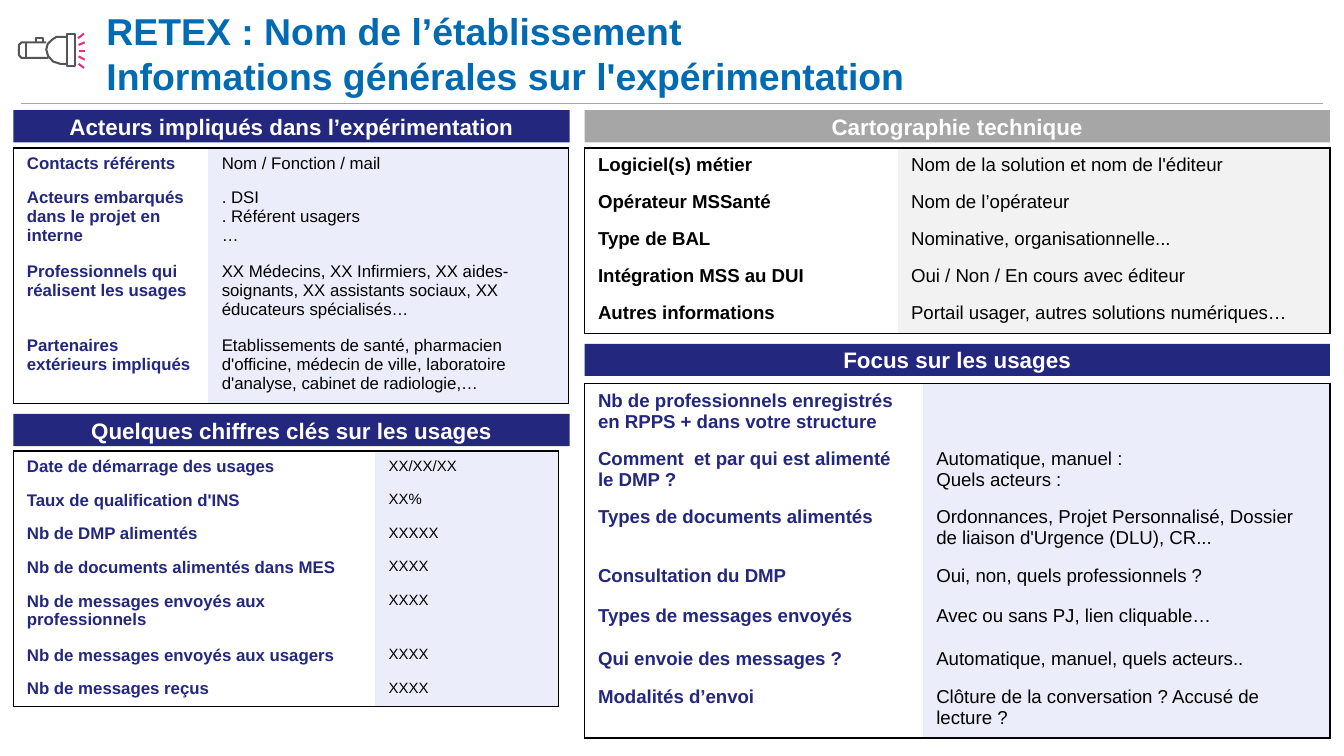
from dataclasses import dataclass

from lxml import etree
from pptx import Presentation
from pptx.dml.color import RGBColor
from pptx.enum import shapes, text
from pptx.oxml import ns
from pptx.util import Pt


@dataclass(frozen=True)
class Theme:
    font: str = "Arial"
    title: str = "006AB2"
    navy: str = "23277E"
    lavender: str = "ECEDFA"
    grey: str = "A6A6A6"
    pale_grey: str = "F2F2F2"
    black: str = "000000"
    white: str = "FFFFFF"
    torch: str = "555557"
    ray: str = "E73083"
    title_size: float = 20
    banner_size: float = 12
    large: float = 10
    medium: float = 9
    small: float = 8


THEME = Theme()


@dataclass(frozen=True)
class Section:
    """A banner with the two-column table under it; lengths in points."""
    heading: str
    left: float
    banner_top: float
    banner_width: float
    banner_color: str
    table_top: float
    columns: tuple[float, float]
    row_heights: list[float]
    label_color: str
    value_fill: str
    label_size: float
    value_size: float
    rows: list[tuple[str, str]]


BANNER_HEIGHT = 17.3
LEFT, RIGHT = 7.2, 313.2
NAVY_STYLE = (THEME.navy, THEME.lavender)

SECTIONS = [
    Section("Acteurs impliqués dans l’expérimentation", LEFT, 59, 298, THEME.navy,
            79.2, (104.4, 193), [18.2, 39.6, 39.6, 39.6],
            *NAVY_STYLE, THEME.medium, THEME.medium, [
                ("Contacts référents", "Nom / Fonction / mail"),
                ("Acteurs embarqués dans le projet en interne",
                 ". DSI\n. Référent usagers\n…"),
                ("Professionnels qui réalisent les usages",
                 "XX Médecins, XX Infirmiers, XX aides-soignants, "
                 "XX assistants sociaux, XX éducateurs spécialisés…"),
                ("Partenaires extérieurs impliqués",
                 "Etablissements de santé, pharmacien d'officine, médecin de ville, "
                 "laboratoire d'analyse, cabinet de radiologie,…"),
            ]),
    Section("Quelques chiffres clés sur les usages", LEFT, 221.8, 298, THEME.navy,
            241.5, (193.8, 98.2), [18, 18, 18, 18, 29, 18, 18],
            *NAVY_STYLE, THEME.medium, THEME.small, [
                ("Date de démarrage des usages", "XX/XX/XX"),
                ("Taux de qualification d'INS", "XX%"),
                ("Nb de DMP alimentés", "XXXXX"),
                ("Nb de documents alimentés dans MES", "XXXX"),
                ("Nb de messages envoyés aux professionnels", "XXXX"),
                ("Nb de messages envoyés aux usagers", "XXXX"),
                ("Nb de messages reçus", "XXXX"),
            ]),
    Section("Cartographie technique", RIGHT, 59, 399.2, THEME.grey,
            79.2, (167.7, 231.5), [19.9] * 5,
            THEME.black, THEME.pale_grey, THEME.large, THEME.large, [
                ("Logiciel(s) métier", "Nom de la solution et nom de l'éditeur"),
                ("Opérateur MSSanté", "Nom de l’opérateur"),
                ("Type de BAL", "Nominative, organisationnelle..."),
                ("Intégration MSS au DUI", "Oui / Non / En cours avec éditeur"),
                ("Autres informations", "Portail usager, autres solutions numériques…"),
            ]),
    Section("Focus sur les usages", RIGHT, 184.2, 399.2, THEME.navy,
            205.5, (181.2, 218), [31.1, 31.1, 31.5, 21.6, 23, 20.4, 31.3],
            *NAVY_STYLE, THEME.large, THEME.large, [
                ("Nb de professionnels enregistrés en RPPS + dans votre structure", ""),
                ("Comment  et par qui est alimenté le DMP ?",
                 "Automatique, manuel :\nQuels acteurs :"),
                ("Types de documents alimentés",
                 "Ordonnances, Projet Personnalisé, Dossier de liaison d'Urgence (DLU), CR..."),
                ("Consultation du DMP", "Oui, non, quels professionnels ?"),
                ("Types de messages envoyés", "Avec ou sans PJ, lien cliquable…"),
                ("Qui envoie des messages ?", "Automatique, manuel, quels acteurs.."),
                ("Modalités d’envoi", "Clôture de la conversation ? Accusé de lecture ?"),
            ]),
]

# Torch outline and light rays, in points
TORCH_STROKES = [
    [(36, 18.1), (40.3, 18.1), (40.3, 35.3), (36, 35.3), (36, 18.1)],
    [(36, 19.8), (30.2, 19.8), (28, 21.2), (25.6, 23.5), (24.8, 26.6),
     (25.8, 30), (28.5, 33), (32.4, 34.2), (36, 34.2)],
    [(24.8, 22.7), (11.5, 22.7), (10.1, 24.1), (10.1, 29.5), (11.5, 31), (25.9, 31)],
    [(14, 22.7), (14, 31)],
    [(19.4, 22.7), (19.4, 20.5), (23, 20.5), (23, 22.7)],
]
RAYS = [
    (41.8, 20.5, 45, 18),
    (42.1, 24.1, 45.4, 22.7),
    (42.1, 27.4, 45.7, 27.4),
    (42.1, 30.2, 45.4, 32),
    (42.1, 34.2, 45, 36.4),
]


def style_text(frame, size: float, color: str, bold: bool, align=None) -> None:
    for paragraph in frame.paragraphs:
        paragraph.alignment = align
        paragraph.font.name = THEME.font
        paragraph.font.size = Pt(size)
        paragraph.font.bold = bold
        paragraph.font.color.rgb = RGBColor.from_string(color)


def set_borders(cell, edges: set[str]) -> None:
    """Draw the listed edges (L, R, T, B) in black and clear the others."""
    properties = cell._tc.get_or_add_tcPr()
    for side in "LRTB":
        line = etree.SubElement(properties, ns.qn(f"a:ln{side}"), w=str(Pt(1)))
        if side in edges:
            fill = etree.SubElement(line, ns.qn("a:solidFill"))
            etree.SubElement(fill, ns.qn("a:srgbClr"), val=THEME.black)
        else:
            etree.SubElement(line, ns.qn("a:noFill"))


def draw_banner(slide, section: Section) -> None:
    banner = slide.shapes.add_shape(
        shapes.MSO_SHAPE.RECTANGLE, Pt(section.left), Pt(section.banner_top),
        Pt(section.banner_width), Pt(BANNER_HEIGHT))
    banner.shadow.inherit = False
    banner.fill.solid()
    banner.fill.fore_color.rgb = RGBColor.from_string(section.banner_color)
    banner.line.fill.background()
    banner.text_frame.text = section.heading
    banner.text_frame.vertical_anchor = text.MSO_ANCHOR.MIDDLE
    style_text(banner.text_frame, THEME.banner_size, THEME.white, True,
               text.PP_ALIGN.CENTER)


def draw_table(slide, section: Section) -> None:
    last = len(section.rows) - 1
    table = slide.shapes.add_table(
        len(section.rows), 2, Pt(section.left), Pt(section.table_top),
        Pt(sum(section.columns)), Pt(sum(section.row_heights))).table
    table.first_row = table.horz_banding = False
    for column, width in zip(table.columns, section.columns):
        column.width = Pt(width)
    for r, (contents, height) in enumerate(zip(section.rows, section.row_heights)):
        table.rows[r].height = Pt(height)
        outer = ({"T"} if r == 0 else set()) | ({"B"} if r == last else set())
        label, value = table.cell(r, 0), table.cell(r, 1)
        label.text, value.text = contents
        set_borders(label, outer | {"L"})
        set_borders(value, outer | {"R"})
        label.fill.background()
        value.fill.solid()
        value.fill.fore_color.rgb = RGBColor.from_string(section.value_fill)
        style_text(label.text_frame, section.label_size, section.label_color, True)
        style_text(value.text_frame, section.value_size, THEME.black, False)


def draw_line(slide, x1: float, y1: float, x2: float, y2: float,
              color: str, width: float) -> None:
    line = slide.shapes.add_connector(
        shapes.MSO_CONNECTOR.STRAIGHT, Pt(x1), Pt(y1), Pt(x2), Pt(y2))
    line.line.color.rgb = RGBColor.from_string(color)
    line.line.width = Pt(width)
    etree.SubElement(line._element.spPr, ns.qn("a:effectLst"))


def draw_torch(slide) -> None:
    first, *others = [[(Pt(x), Pt(y)) for x, y in stroke] for stroke in TORCH_STROKES]
    builder = slide.shapes.build_freeform(*first[0])
    builder.add_line_segments(first[1:], close=False)
    for stroke in others:
        builder.move_to(*stroke[0])
        builder.add_line_segments(stroke[1:], close=False)
    torch = builder.convert_to_shape()
    torch.shadow.inherit = False
    torch.fill.background()
    torch.line.color.rgb = RGBColor.from_string(THEME.torch)
    torch.line.width = Pt(1.1)
    for ray in RAYS:
        draw_line(slide, *ray, THEME.ray, 1.1)


def draw_title(slide) -> None:
    title = slide.shapes.title
    title.left, title.top, title.width, title.height = Pt(57), Pt(2.9), Pt(592.6), Pt(49.7)
    frame = title.text_frame
    frame.text = ("RETEX : Nom de l’établissement\v"
                  "Informations générales sur l'expérimentation")
    frame.auto_size = text.MSO_AUTO_SIZE.NONE
    frame.word_wrap = True
    frame.vertical_anchor = text.MSO_ANCHOR.BOTTOM
    frame.margin_left = frame.margin_right = frame.margin_bottom = Pt(0)
    frame.margin_top = Pt(0.7)
    style_text(frame, THEME.title_size, THEME.title, True, text.PP_ALIGN.LEFT)


def main() -> None:
    deck = Presentation()
    deck.slide_width, deck.slide_height = Pt(720), Pt(405)
    slide = deck.slides.add_slide(deck.slide_layouts[5])

    # Header
    draw_line(slide, 11.5, 55.4, 708.5, 55.4, THEME.grey, 0.25)
    draw_title(slide)
    draw_torch(slide)

    # Four information sections
    for section in SECTIONS:
        draw_banner(slide, section)
        draw_table(slide, section)

    deck.save("out.pptx")


if __name__ == "__main__":
    main()
